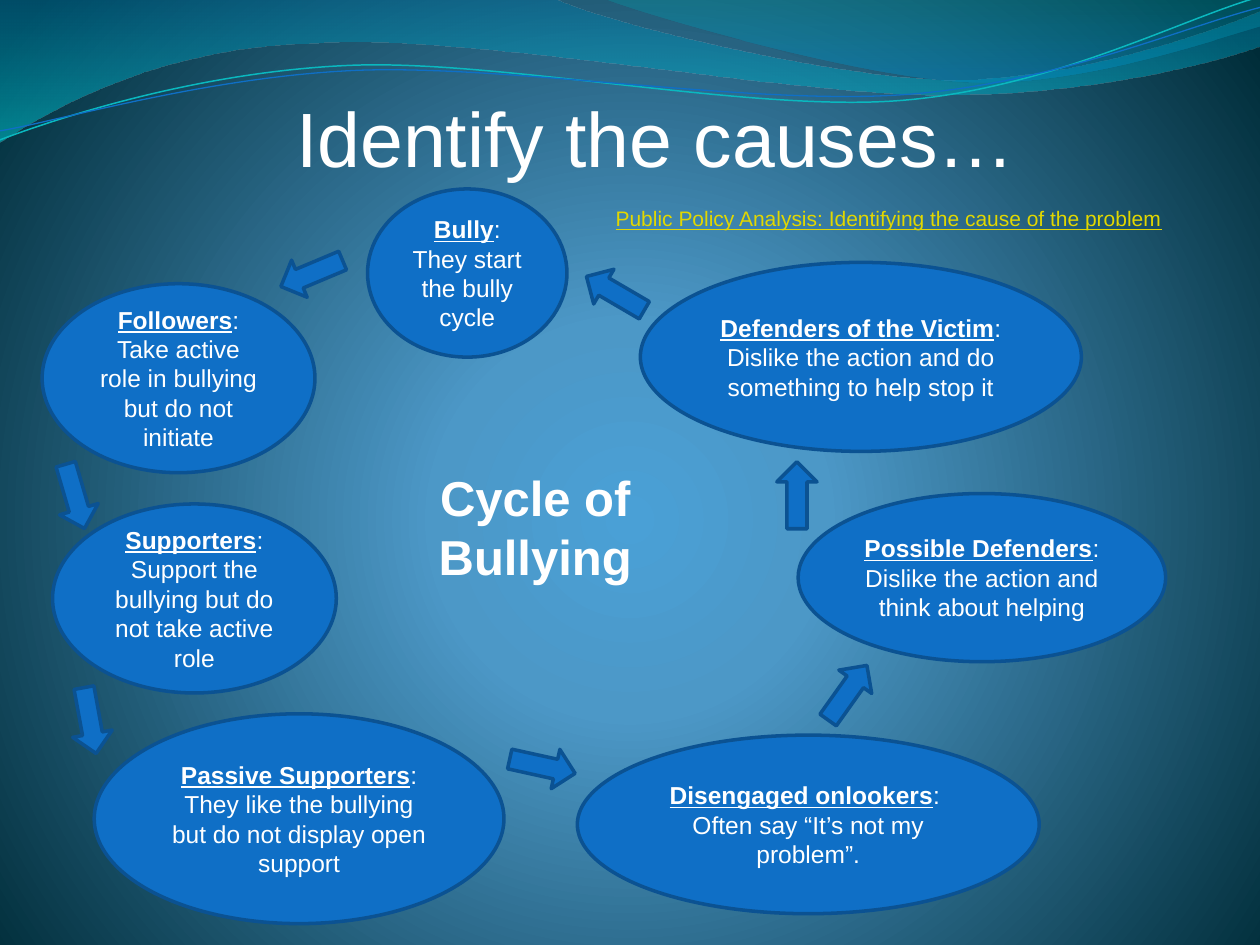
"""Build a slide showing the cycle of bullying as a ring of ellipses and arrows."""
from dataclasses import dataclass
from math import cos, radians, sin
from typing import Optional

from lxml.etree import SubElement
from pptx import Presentation
from pptx.dml.color import RGBColor
from pptx.enum.shapes import MSO_SHAPE
from pptx.enum.text import MSO_ANCHOR, MSO_AUTO_SIZE, PP_ALIGN
from pptx.oxml import parse_xml
from pptx.oxml.ns import nsdecls, qn
from pptx.util import Cm, Pt

FONT = "Arial"
COLORS = {
    "text": "FFFFFF",
    "link": "E2D700",
    "shape": "0F6FC6",
    "outline": "0B5292",
    "teal_line": "0AB8BF",
    "glow": "4AA0D6",
    "mid": "4C98C7",
    "edge": "002C38",
    "wave_blue": "0074A1",
    "wave_cyan": "00C6CF",
    "crest_teal": "00A1A9",
    "crest_blue": "008BBF",
}
ARROW_WIDTH, ARROW_HEIGHT = 1.35, 0.81
CIRCLE = '<a:path path="circle"><a:fillToRect l="10000" t="110000" r="10000" b="100000"/></a:path>'
DOWNWARD = '<a:lin ang="5400000" scaled="0"/>'


@dataclass
class Role:
    name: str
    description: str
    left: float
    top: float
    width: float
    height: float


@dataclass
class Arrow:
    left: float
    top: float
    rotation: float


@dataclass
class Wave:
    """An outline in cm; each segment holds its control points and its end point."""
    box: tuple
    start: tuple
    segments: list
    stops: Optional[list] = None
    line: Optional[str] = None
    weight: float = 0
    rotation: float = 0


ROLES = [
    Role("Bully", "They start the bully cycle", 7.41, 3.81, 4.02, 3.39),
    Role("Possible Defenders", "Dislike the action and think about helping", 16.09, 9.95, 7.41, 3.39),
    Role("Disengaged onlookers", " Often say “It’s not my problem”.", 11.64, 14.82, 9.31, 3.6),
    Role("Passive Supporters", "They like the bullying but do not display open support", 1.9, 14.39, 8.26, 4.23),
    Role("Supporters", "Support the bullying but do not take active role", 1.06, 10.16, 5.72, 3.81),
    Role("Followers", "Take active role in bullying but do not initiate", 0.85, 5.72, 5.5, 3.81),
    Role("Defenders of the Victim", "Dislike the action and do something to help stop it", 12.91, 5.29, 8.89, 3.81),
]
ARROWS = [
    Arrow(5.61, 5.11, 337.2),
    Arrow(0.84, 9.6, 253.7),
    Arrow(1.14, 14.12, 259.6),
    Arrow(10.26, 15.04, 192.4),
    Arrow(16.41, 13.56, 125.4),
    Arrow(15.39, 9.58, 90),
    Arrow(11.73, 5.51, 30.3),
]
WAVES = [
    Wave((-0.03, -0.03, 25.45, 2.9), (0, 0), [
        [(11.18, -0.03)],
        [(12.09, 0.43), (16.87, 1.6), (19.25, 1.6)],
        [(21.67, 1.6), (24.33, 0.66), (25.4, 0.23)],
        [(25.43, 0.91)],
        [(24.97, 1.12), (22.1, 1.93), (18.95, 1.91)],
        [(15.8, 1.91), (9.7, 0.71), (6.53, 0.86)],
        [(3.28, 0.91), (1.17, 2.11), (-0.03, 2.87)],
        [(0, 0)],
    ], stops=[(0, "wave_blue", 45), (100, "wave_cyan", 55)]),
    Wave((12.17, -0.03, 13.23, 1.78), (12.17, -0.03), [
        [(12.93, 0.28), (17.32, 1.57), (19.53, 1.65)],
        [(21.74, 1.75), (24.41, 0.81), (25.4, 0.53)],
        [(25.4, 0)],
        [(12.17, -0.03)],
    ], stops=[(0, "crest_teal", 30), (80, "crest_blue", 45)]),
    Wave((-0.05, 0.56, 25.45, 1.8), (0, 2.82), [
        [(1.22, 2.36), (4.01, 1.45), (7.04, 1.32)],
        [(10.03, 1.19), (15.06, 2.26), (18.11, 2.03)],
        [(21.16, 1.8), (23.83, 0.38), (25.35, -0.05)],
    ], line="teal_line", weight=0.85, rotation=357.3),
    Wave((-0.05, 0.76, 25.48, 1.47), (0, 2.64), [
        [(1.19, 2.44), (4.17, 1.55), (7.19, 1.42)],
        [(10.24, 1.3), (15.16, 2.13), (18.21, 1.91)],
        [(21.23, 1.7), (23.9, 0.53), (25.4, 0.15)],
    ], line="shape", weight=0.75, rotation=357.3),
]


def color(name: str) -> RGBColor:
    return RGBColor.from_string(COLORS[name])


def gradient(stops: list, direction: str):
    stop_xml = "".join(
        f'<a:gs pos="{position * 1000}"><a:srgbClr val="{COLORS[name]}">'
        f'<a:alpha val="{opacity * 1000}"/></a:srgbClr></a:gs>'
        for position, name, opacity in stops
    )
    return parse_xml(f'<a:gradFill {nsdecls("a")} rotWithShape="1"><a:gsLst>{stop_xml}</a:gsLst>{direction}</a:gradFill>')


def paint_background(slide) -> None:
    slide.background.fill.solid()
    solid = next(slide.element.iter(qn("a:solidFill")))
    stops = [(0, "glow", 100), (25, "mid", 100), (100, "edge", 100)]
    solid.getparent().replace(solid, gradient(stops, CIRCLE))


def place(shape, left: float, top: float, width: float, height: float) -> None:
    shape.left, shape.top, shape.width, shape.height = map(Cm, (left, top, width, height))


def local_point(wave: Wave, point: tuple) -> tuple:
    left, top, width, height = wave.box
    angle = radians(-wave.rotation)
    x, y = point[0] - left - width / 2, point[1] - top - height / 2
    return (Cm(x * cos(angle) - y * sin(angle) + width / 2),
            Cm(x * sin(angle) + y * cos(angle) + height / 2))


def curve_outline(shape, wave: Wave) -> None:
    outline = next(shape.element.iter(qn("a:path")))
    outline.set("w", str(Cm(wave.box[2])))
    outline.set("h", str(Cm(wave.box[3])))
    for child in list(outline):
        outline.remove(child)
    commands = [("a:moveTo", [wave.start])]
    commands += [("a:cubicBezTo" if len(points) == 3 else "a:lnTo", points) for points in wave.segments]
    for tag, points in commands:
        command = SubElement(outline, qn(tag))
        for x, y in (local_point(wave, point) for point in points):
            SubElement(command, qn("a:pt"), x=str(x), y=str(y))
    if wave.stops:
        SubElement(outline, qn("a:close"))


def draw_wave(slide, wave: Wave) -> None:
    builder = slide.shapes.build_freeform(Cm(wave.start[0]), Cm(wave.start[1]))
    ends = [segment[-1] for segment in wave.segments]
    builder.add_line_segments([(Cm(x), Cm(y)) for x, y in ends], close=False)
    shape = builder.convert_to_shape()
    curve_outline(shape, wave)
    place(shape, *wave.box)
    shape.rotation = wave.rotation
    shape.shadow.inherit = False
    shape.fill.background()
    if wave.stops:
        shape.line.fill.background()
        properties = shape.element.spPr
        properties.replace(properties.find(qn("a:noFill")), gradient(wave.stops, DOWNWARD))
    else:
        shape.line.color.rgb = color(wave.line)
        shape.line.width = Pt(wave.weight)


def format_paragraph(paragraph, size: float, name: str, alignment: PP_ALIGN) -> None:
    paragraph.alignment = alignment
    paragraph.font.name = FONT
    paragraph.font.size = Pt(size)
    paragraph.font.color.rgb = color(name)


def draw_shape(slide, kind: MSO_SHAPE, left: float, top: float, width: float, height: float):
    shape = slide.shapes.add_shape(kind, Cm(left), Cm(top), Cm(width), Cm(height))
    shape.shadow.inherit = False
    shape.fill.solid()
    shape.fill.fore_color.rgb = color("shape")
    shape.line.color.rgb = color("outline")
    shape.line.width = Pt(2)
    return shape


def draw_role(slide, role: Role) -> None:
    shape = draw_shape(slide, MSO_SHAPE.OVAL, role.left, role.top, role.width, role.height)
    shape.text_frame.word_wrap = True
    shape.text_frame.vertical_anchor = MSO_ANCHOR.MIDDLE
    paragraph = shape.text_frame.paragraphs[0]
    format_paragraph(paragraph, 14, "text", PP_ALIGN.CENTER)
    name = paragraph.add_run()
    name.text = role.name
    name.font.bold = name.font.underline = True
    paragraph.add_run().text = f": {role.description}"


def draw_arrow(slide, arrow: Arrow) -> None:
    shape = draw_shape(slide, MSO_SHAPE.LEFT_ARROW, arrow.left, arrow.top, ARROW_WIDTH, ARROW_HEIGHT)
    shape.rotation = arrow.rotation


def fill_placeholder(shape, text: str, size: float, name: str, margin_left: float):
    frame = shape.text_frame
    frame.text = text
    frame.auto_size = MSO_AUTO_SIZE.NONE
    frame.vertical_anchor = MSO_ANCHOR.TOP
    frame.margin_left, frame.margin_top = Cm(margin_left), Cm(0.13)
    format_paragraph(frame.paragraphs[0], size, name, PP_ALIGN.LEFT)
    return frame


def main() -> None:
    presentation = Presentation()
    presentation.slide_width, presentation.slide_height = Cm(25.4), Cm(19.05)
    slide = presentation.slides.add_slide(presentation.slide_layouts[1])
    paint_background(slide)
    title, body = slide.shapes.title, slide.placeholders[1]
    for wave in WAVES:
        draw_wave(slide, wave)
    for placeholder in (title, body):
        slide.shapes.element.append(placeholder.element)

    place(title, 0.64, 1.7, 22.43, 2.12)
    fill_placeholder(title, "Identify the causes…", 44, "text", 5.33)
    place(body, 12.28, 4.02, 11.64, 1.19)
    link_text = "Public Policy Analysis: Identifying the cause of the problem"
    frame = fill_placeholder(body, link_text, 12, "link", 0.13)
    frame.margin_right = frame.margin_bottom = Cm(0.13)
    paragraph = frame.paragraphs[0]
    link = paragraph.runs[0]
    link.font.underline = True
    link.font.color.rgb = color("link")
    properties = paragraph._p.get_or_add_pPr()
    properties.set("marL", "0")
    properties.set("indent", "0")
    properties.insert_element_before(SubElement(properties, qn("a:buNone")), "a:tabLst", "a:defRPr")

    for role in ROLES:
        draw_role(slide, role)
    for arrow in ARROWS:
        draw_arrow(slide, arrow)

    center = slide.shapes.add_textbox(Cm(8.04), Cm(9.31), Cm(5.5), Cm(2.64))
    center.text_frame.word_wrap = True
    center.text_frame.text = "Cycle of Bullying"
    paragraph = center.text_frame.paragraphs[0]
    format_paragraph(paragraph, 28, "text", PP_ALIGN.CENTER)
    paragraph.font.bold = True
    presentation.save("out.pptx")


if __name__ == "__main__":
    main()
